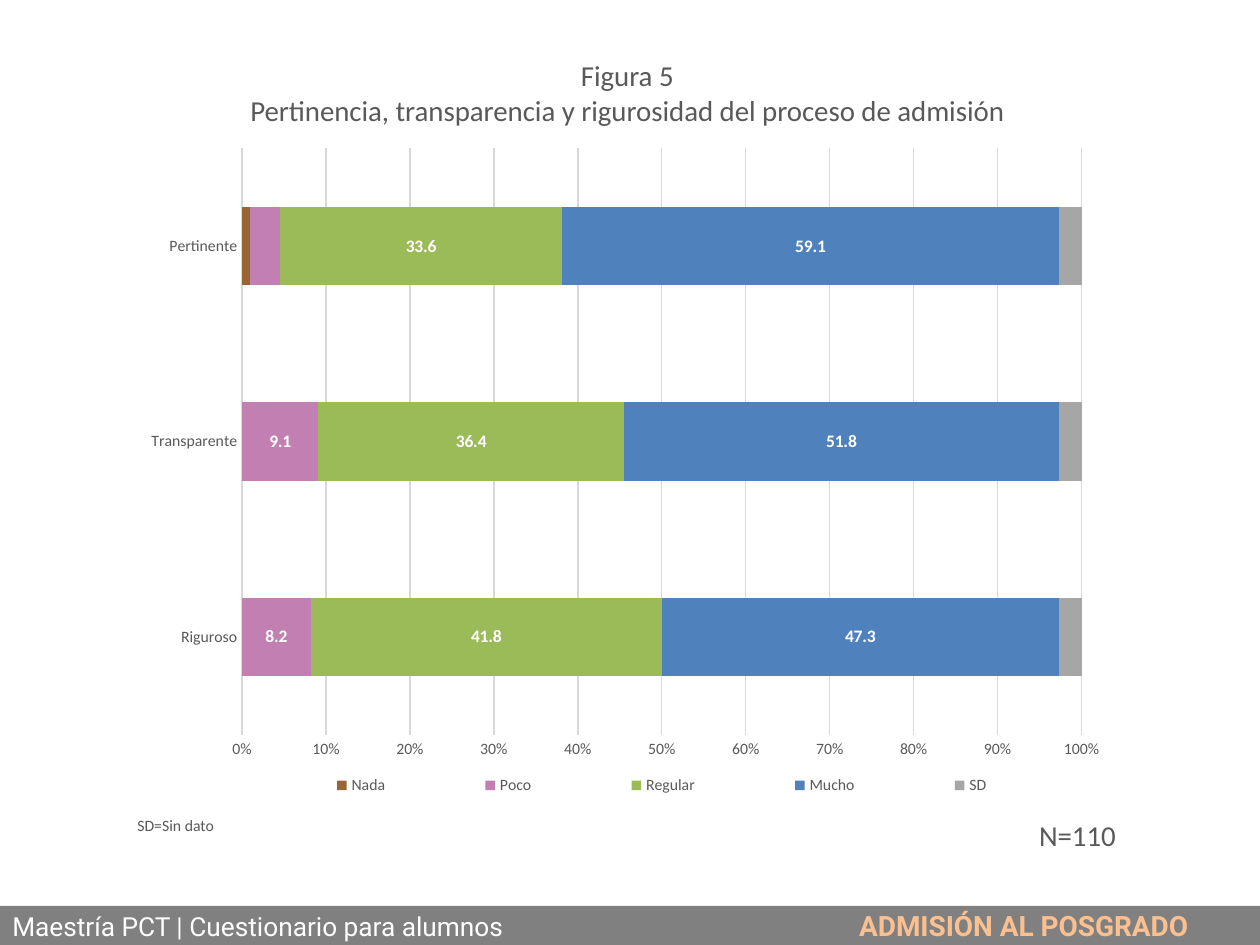
import pptx
import pptx.chart.data
import pptx.dml.color
import pptx.enum.chart
import pptx.enum.shapes
import pptx.enum.text
import pptx.oxml
import pptx.oxml.ns
import pptx.util
from pptx.util import Cm

COLORS = {
    "text": "595959", "grid": "D9D9D9", "white": "FFFFFF",
    "banner": "808080", "accent": "FAC090",
    "Nada": "996633", "Poco": "C27FB2", "Regular": "9BBB59",
    "Mucho": "4F81BD", "SD": "A6A6A6",
}
CATEGORIES = ["Riguroso", "Transparente", "Pertinente"]
ANSWERS = {
    "Nada": (0, 0, 0.9),
    "Poco": (8.2, 9.1, 3.6),
    "Regular": (41.8, 36.4, 33.6),
    "Mucho": (47.3, 51.8, 59.1),
    "SD": (2.7, 2.7, 2.7),
}
LABELLED = ("Poco", "Regular", "Mucho")
ALIGN = pptx.enum.text.PP_ALIGN
ANCHOR = pptx.enum.text.MSO_ANCHOR
NS = pptx.oxml.ns.nsdecls("c")


def rgb(name):
    return pptx.dml.color.RGBColor.from_string(COLORS[name])


class SlideBuilder:
    def __init__(self, slide, body_font="Calibri", banner_font="Roboto"):
        self.slide = slide
        self.body_font = body_font
        self.banner_font = banner_font

    def style(self, font, size, color="text", bold=False, face=None):
        font.name = face or self.body_font
        font.size = pptx.util.Pt(size)
        font.bold = bold
        font.color.rgb = rgb(color)

    def add_run(self, paragraph, text, size, **look):
        run = paragraph.add_run()
        run.text = text
        self.style(run.font, size, **look)

    def title(self, lines, left, top, width, height, size):
        heading = self.slide.shapes.title
        heading.left, heading.top = left, top
        heading.width, heading.height = width, height
        frame = heading.text_frame
        frame.vertical_anchor = ANCHOR.TOP
        frame.auto_size = pptx.enum.text.MSO_AUTO_SIZE.NONE
        for index, line in enumerate(lines):
            paragraph = frame.add_paragraph() if index else frame.paragraphs[0]
            paragraph.alignment = ALIGN.CENTER
            self.add_run(paragraph, line, size)

    def note(self, text, left, top, width, height, size, wrap=True):
        frame = self.slide.shapes.add_textbox(left, top, width, height).text_frame
        frame.word_wrap = wrap
        frame.auto_size = pptx.enum.text.MSO_AUTO_SIZE.SHAPE_TO_FIT_TEXT
        frame.paragraphs[0].alignment = ALIGN.CENTER
        self.add_run(frame.paragraphs[0], text, size)

    def banner(self, survey, section, left, top, width, height, tab):
        bar = self.slide.shapes.add_shape(
            pptx.enum.shapes.MSO_SHAPE.RECTANGLE, left, top, width, height)
        bar.shadow.inherit = False
        bar.fill.solid()
        bar.fill.fore_color.rgb = rgb("banner")
        bar.line.fill.background()
        bar.text_frame.vertical_anchor = ANCHOR.MIDDLE
        paragraph = bar.text_frame.paragraphs[0]
        paragraph.alignment = ALIGN.JUSTIFY
        paragraph._p.get_or_add_pPr().append(pptx.oxml.parse_xml(
            f'<a:tabLst {pptx.oxml.ns.nsdecls("a")}><a:tab pos="{int(tab)}" algn="l"/></a:tabLst>'))
        face = self.banner_font
        self.add_run(paragraph, survey, 15, color="white", face=face)
        self.add_run(paragraph, "\t", 12, color="white", bold=True, face=face)
        self.add_run(paragraph, section, 16, color="accent", bold=True, face=face)

    def place(self, element, x, y, w, h, inner=False):
        """Set a manual layout, in fractions of the chart area."""
        for old in element.findall(pptx.oxml.ns.qn("c:layout")):
            element.remove(old)
        target = '<c:layoutTarget val="inner"/>' if inner else ""
        values = "".join(f'<c:{tag} val="{value}"/>'
                         for tag, value in zip("xywh", (x, y, w, h)))
        layout = pptx.oxml.parse_xml(
            f'<c:layout {NS}><c:manualLayout>{target}<c:xMode val="edge"/>'
            f'<c:yMode val="edge"/>{values}</c:manualLayout></c:layout>')
        element.insert(0 if inner else 1, layout)

    def stacked_chart(self, left, top, width, height):
        data = pptx.chart.data.CategoryChartData(number_format="0.0")
        data.categories = CATEGORIES
        for answer, values in ANSWERS.items():
            data.add_series(answer, values)
        chart = self.slide.shapes.add_chart(
            pptx.enum.chart.XL_CHART_TYPE.BAR_STACKED_100,
            left, top, width, height, data).chart
        chart.has_title = False
        self.style(chart.font, 10)

        # Bars and their labels
        plot = chart.plots[0]
        plot.gap_width, plot.overlap = 150, 100
        plot.vary_by_categories = False
        for series in plot.series:
            series.format.fill.solid()
            series.format.fill.fore_color.rgb = rgb(series.name)
            if series.name in LABELLED:
                labels = series.data_labels
                labels.show_value = True
                labels.number_format = "##0.0"
                labels.number_format_is_linked = False
                self.style(labels.font, 10, "white", bold=True)
                for index, value in enumerate(ANSWERS[series.name]):
                    if value < 5:  # too narrow for a label
                        labels._element.insert(0, pptx.oxml.parse_xml(
                            f'<c:dLbl {NS}><c:idx val="{index}"/>'
                            '<c:delete val="1"/></c:dLbl>'))

        # Axes
        for axis in (chart.category_axis, chart.value_axis):
            axis.major_tick_mark = pptx.enum.chart.XL_TICK_MARK.NONE
            axis.minor_tick_mark = pptx.enum.chart.XL_TICK_MARK.NONE
            self.style(axis.tick_labels.font, 9)
        scale = chart.value_axis
        scale.maximum_scale, scale.major_unit = 1, 0.1
        scale.tick_labels.number_format = "0%"
        scale.tick_labels.number_format_is_linked = False
        scale.format.line.fill.background()
        scale.has_major_gridlines = True
        for line in (chart.category_axis.format.line,
                     scale.major_gridlines.format.line):
            line.color.rgb = rgb("grid")
            line.width = pptx.util.Pt(0.75)

        # Legend
        chart.has_legend = True
        legend = chart.legend
        legend.position = pptx.enum.chart.XL_LEGEND_POSITION.BOTTOM
        legend.include_in_layout = False
        self.style(legend.font, 9)
        self.place(legend._element, 0.11, 0.94, 0.85, 0.05)
        self.place(chart._chartSpace.chart.plotArea, 0.11, 0.02, 0.85, 0.87, inner=True)


def main():
    deck = pptx.Presentation()
    deck.slide_width, deck.slide_height = Cm(25.4), Cm(19.05)
    builder = SlideBuilder(deck.slides.add_slide(deck.slide_layouts[5]))

    # Figure
    builder.title(
        ["Figura 5", "Pertinencia, transparencia y rigurosidad del proceso de admisión"],
        Cm(2.69), Cm(1.04), Cm(19.91), Cm(1.68), 16.5)
    builder.stacked_chart(Cm(2.69), Cm(2.72), Cm(19.91), Cm(13.59))

    # Notes below the figure
    builder.note("SD=Sin dato", Cm(2.36), Cm(16.33), Cm(2.36), Cm(0.64), 9)
    builder.note("N=110", Cm(20.68), Cm(16.36), Cm(2.08), Cm(0.97), 16.5, wrap=False)

    # Footer banner
    builder.banner("Maestría PCT | Cuestionario para alumnos", "ADMISIÓN AL POSGRADO",
                   Cm(0), Cm(18.26), Cm(25.4), Cm(0.79), tab=Cm(17.07))
    deck.save("out.pptx")


if __name__ == "__main__":
    main()
